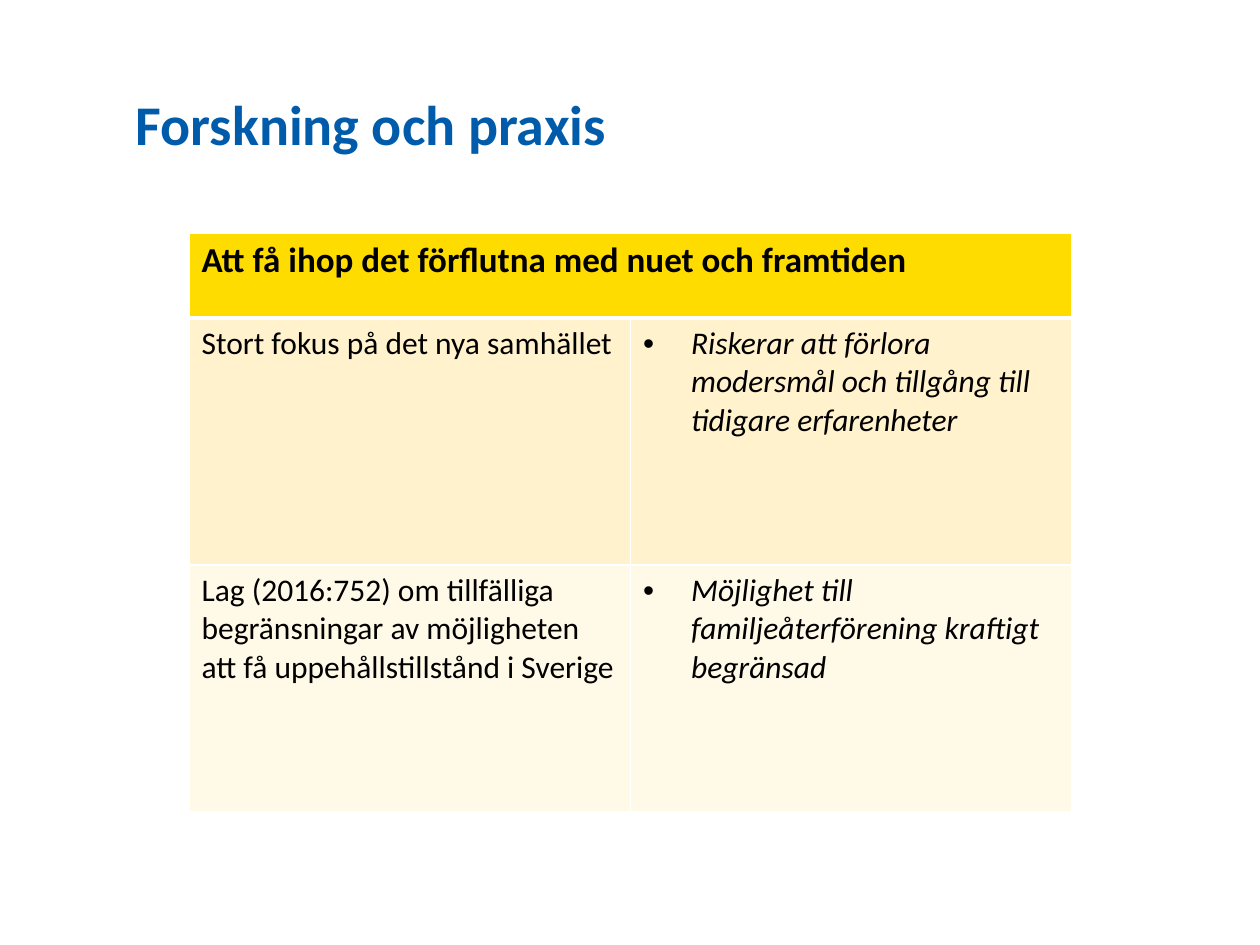
from lxml import etree
from pptx import Presentation
from pptx.dml.color import RGBColor
from pptx.enum.text import MSO_ANCHOR
from pptx.oxml.ns import qn
from pptx.util import Pt

TOP = MSO_ANCHOR.TOP
SCALE = 914400 / 126
FONT = "Calibri"
WHITE, BLACK, BLUE = "FFFFFF", "000000", "005CAA"
GOLD, SAND, CREAM = "FFDC00", "FFF2CC", "FFF9E7"
HEAD = "Att få ihop det förflutna med nuet och framtiden"
ROWS = [
    ("Stort fokus på det nya samhället",
     "Riskerar att förlora modersmål och tillgång till tidigare erfarenheter",
     SAND),
    ("Lag (2016:752) om tillfälliga begränsningar av möjligheten "
     "att få uppehållstillstånd i Sverige",
     "Möjlighet till familjeåterförening kraftigt begränsad",
     CREAM),
]


def px(num):
    """Turn px into EMU."""
    return round(num * SCALE)


def paint(target, tone):
    """Give a fill or a font a hex colour."""
    if hasattr(target, "solid"):
        target.solid()
        target.fore_color.rgb = RGBColor.from_string(tone)
    else:
        target.color.rgb = RGBColor.from_string(tone)


def write(para, text, size, tone=BLACK, bold=False, slant=False):
    """Add one run to a paragraph."""
    run = para.add_run()
    run.text = text
    font = run.font
    font.name, font.size = FONT, Pt(size)
    font.bold, font.italic = bold, slant
    paint(font, tone)


def bullet(para, indent):
    """Give a paragraph a hanging bullet."""
    props = para._p.get_or_add_pPr()
    props.set("marL", str(px(indent)))
    props.set("indent", str(-px(indent)))
    etree.SubElement(props, qn("a:buFont")).set("typeface", "Arial")
    etree.SubElement(props, qn("a:buChar")).set("char", "•")


def edge(cell, base=1):
    """Draw white borders round a cell, the base in its own width."""
    props = cell._tc.get_or_add_tcPr()
    for side, width in zip("LRTB", (1, 1, 1, base)):
        line = etree.SubElement(props, qn(f"a:ln{side}"), w=str(Pt(width)))
        fill = etree.SubElement(line, qn("a:solidFill"))
        etree.SubElement(fill, qn("a:srgbClr"), val=WHITE)


def title(slide, left, top, width, height):
    """Place the slide title in the given box."""
    box = slide.shapes.add_textbox(px(left), px(top), px(width), px(height))
    frame = box.text_frame
    frame.word_wrap = True
    frame.vertical_anchor = TOP
    write(frame.paragraphs[0], "Forskning och praxis", 32, BLUE, bold=True)


def grid(slide, left, top, width, height):
    """Place the table, with a merged head row, in the given box."""
    table = slide.shapes.add_table(len(ROWS) + 1, 2, px(left), px(top),
                                   px(width), px(height)).table
    head = 85
    for col in table.columns:
        col.width = px(width / 2)
    for row in table.rows:
        row.height = px((height - head) / len(ROWS))
    table.rows[0].height = px(head)
    table.cell(0, 0).merge(table.cell(0, 1))
    for cell in table.rows[0].cells:
        edge(cell, 3)
        paint(cell.fill, GOLD)
    write(table.cell(0, 0).text_frame.paragraphs[0], HEAD, 20, bold=True)
    for num, (fact, risk, tone) in enumerate(ROWS, 1):
        for cell in table.rows[num].cells:
            edge(cell)
            paint(cell.fill, tone)
        write(table.cell(num, 0).text_frame.paragraphs[0], fact, 18)
        para = table.cell(num, 1).text_frame.paragraphs[0]
        bullet(para, 48)
        write(para, risk, 18, slant=True)


def main():
    """Build the slide and save it."""
    deck = Presentation()
    deck.slide_width, deck.slide_height = px(1260), px(945)
    slide = deck.slides.add_slide(deck.slide_layouts[6])
    paint(slide.background.fill, WHITE)
    title(slide, 123, 83, 1012, 149)
    grid(slide, 189, 233, 883, 579)
    deck.save("out.pptx")


if __name__ == "__main__":
    main()
